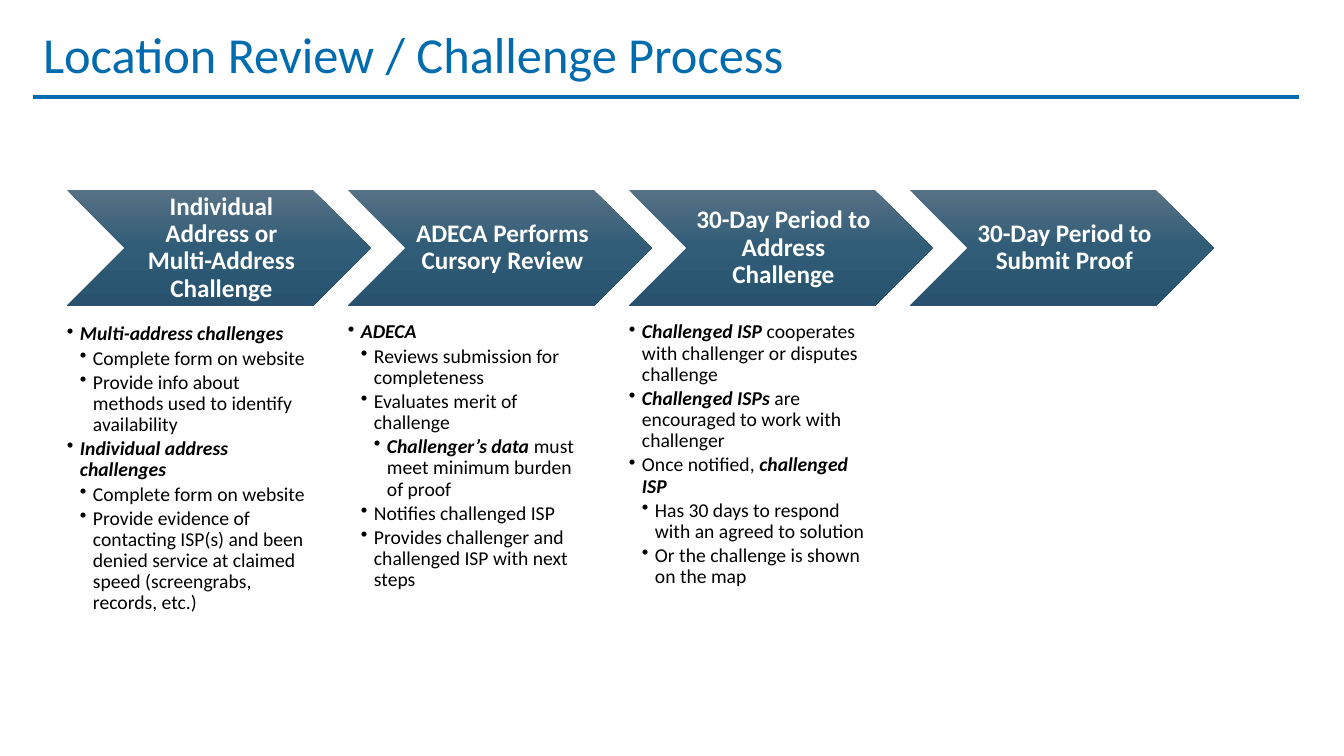
from lxml import etree
from pptx import Presentation
from pptx.dml.color import RGBColor
from pptx.enum.shapes import MSO_CONNECTOR, MSO_SHAPE
from pptx.enum.text import MSO_ANCHOR, MSO_AUTO_SIZE, PP_ALIGN
from pptx.oxml.ns import qn
from pptx.util import Emu, Pt

CHEVRON, STRAIGHT = MSO_SHAPE.CHEVRON, MSO_CONNECTOR.STRAIGHT
TOP, MIDDLE = MSO_ANCHOR.TOP, MSO_ANCHOR.MIDDLE
LEFT, CENTER = PP_ALIGN.LEFT, PP_ALIGN.CENTER
NO_AUTOFIT = MSO_AUTO_SIZE.NONE

EMU_PER_PX = 914400 / 100.8
STEP_LEFT, STEP_PITCH = 67, 281
INDENT = 13

STEPS = [
    "Individual Address or Multi-Address Challenge",
    "ADECA Performs Cursory Review",
    "30-Day Period to Address Challenge",
    "30-Day Period to Submit Proof",
]

# Each column: top, height, then (level, text); ** encloses emphasis.
COLUMNS = [
    (324, 303, [
        (1, "**Multi-address challenges**"),
        (2, "Complete form on website"),
        (2, "Provide info about methods used to identify availability"),
        (1, "**Individual address challenges**"),
        (2, "Complete form on website"),
        (2, "Provide evidence of contacting ISP(s) and been denied service "
            "at claimed speed (screengrabs, records, etc.)"),
    ]),
    (322, 277, [
        (1, "**ADECA**"),
        (2, "Reviews submission for completeness"),
        (2, "Evaluates merit of challenge"),
        (3, "**Challenger’s data **must meet minimum burden of proof"),
        (2, "Notifies challenged ISP"),
        (2, "Provides challenger and challenged ISP with next steps"),
    ]),
    (322, 277, [
        (1, "**Challenged ISP **cooperates with challenger or disputes challenge"),
        (1, "**Challenged ISPs **are encouraged to work with challenger"),
        (1, "Once notified, **challenged ISP**"),
        (2, "Has 30 days to respond with an agreed to solution"),
        (2, "Or the challenge is shown on the map"),
    ]),
]


def px(*lengths):
    return [Emu(round(length * EMU_PER_PX)) for length in lengths]


def rgb(color):
    return RGBColor.from_string(color)


class ProcessSlide:
    font = "Calibri"
    accent, text, inverse = "006BAE", "000000", "FFFFFF"
    gradient = [(0, "577185"), (50, "305C77"), (100, "28526D")]

    def __init__(self, deck):
        self.slide = deck.slides.add_slide(deck.slide_layouts[5])
        self.shapes = self.slide.shapes

    def style(self, para, size, color, align=LEFT, bold=None):
        para.alignment = align
        para.line_spacing = 0.9
        para.font.name, para.font.size = self.font, Pt(size)
        para.font.color.rgb = rgb(color)
        para.font.bold = bold

    def frame(self, box, anchor, insets):
        frame = box.text_frame
        frame.word_wrap = True
        frame.auto_size = NO_AUTOFIT
        frame.vertical_anchor = anchor
        (frame.margin_left, frame.margin_top,
         frame.margin_right, frame.margin_bottom) = px(*insets)
        return frame

    def title(self, text, *place):
        box = self.shapes.title
        box.left, box.top, box.width, box.height = px(*place)
        frame = self.frame(box, TOP, (10, 5, 10, 5))
        frame.text = text
        self.style(frame.paragraphs[0], 36, self.accent)

    def rule(self, left, top, right):
        line = self.shapes.add_connector(STRAIGHT, *px(left, top, right, top))
        line.line.color.rgb = rgb(self.accent)
        line.line.width = Pt(2.25)
        etree.SubElement(line._element.spPr, qn("a:effectLst"))

    def fill_gradient(self, shape):
        shape.fill.gradient()
        shape.fill.gradient_angle = 270
        stops = shape._element.spPr.find(".//" + qn("a:gsLst"))
        stops.clear()
        for percent, color in self.gradient:
            stop = etree.SubElement(stops, qn("a:gs"), pos=str(percent * 1000))
            etree.SubElement(stop, qn("a:srgbClr"), val=color)

    def step(self, text, *place):
        chevron = self.shapes.add_shape(CHEVRON, *px(*place))
        chevron.shadow.inherit = False
        chevron.line.fill.background()
        self.fill_gradient(chevron)
        frame = self.frame(chevron, MIDDLE, (8, 3, 3, 3))
        frame.text = text
        self.style(frame.paragraphs[0], 18, self.inverse, CENTER, True)

    def bullets(self, items, *place):
        box = self.shapes.add_textbox(*px(*place))
        frame = self.frame(box, TOP, (0, 0, 0, 0))
        for index, (level, text) in enumerate(items):
            para = frame.add_paragraph() if index else frame.paragraphs[0]
            self.bullet(para, level, text)

    def bullet(self, para, level, text):
        para.level = level - 1
        para.space_after = Pt(2.1)
        self.style(para, 14, self.text)
        margin, hanging = px(INDENT * level, -INDENT)
        properties = para._p.get_or_add_pPr()
        properties.set("marL", str(margin))
        properties.set("indent", str(hanging))
        mark = etree.Element(qn("a:buChar"), char="•")
        properties.find(qn("a:defRPr")).addprevious(mark)
        for index, part in enumerate(text.split("**")):
            if part:
                span = para.add_run()
                span.text = part
                span.font.bold = span.font.italic = index % 2 == 1


def main():
    deck = Presentation()
    deck.slide_width, deck.slide_height = px(1344, 756)
    page = ProcessSlide(deck)
    page.title("Location Review / Challenge Process", 33, 25, 1159, 146)
    page.rule(33, 97, 1299)
    for index, text in enumerate(STEPS):
        page.step(text, STEP_LEFT + index * STEP_PITCH, 190, 304, 116)
    for index, (top, height, items) in enumerate(COLUMNS):
        page.bullets(items, STEP_LEFT + index * STEP_PITCH, top, 244, height)
    deck.save("out.pptx")


if __name__ == "__main__":
    main()
